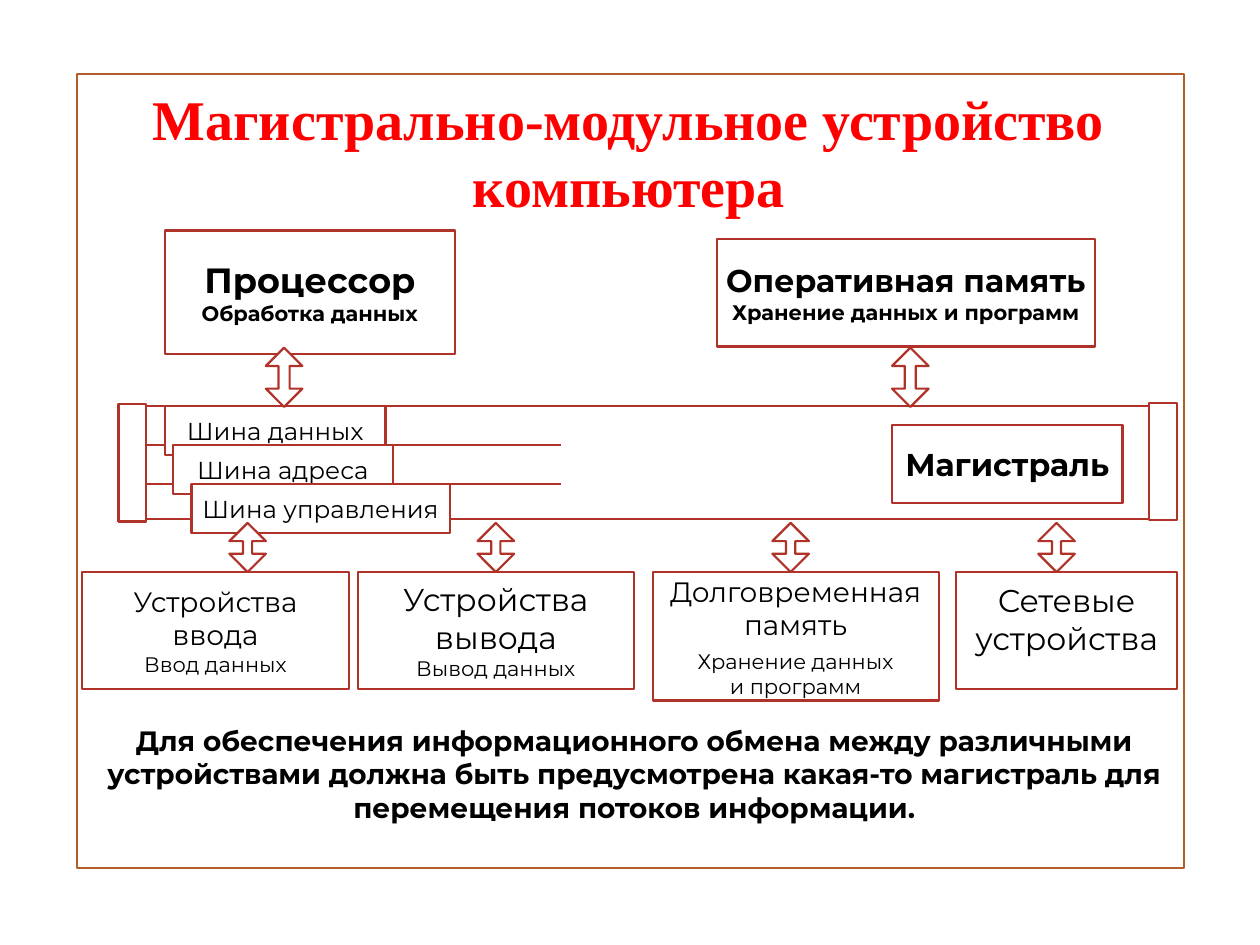
from lxml import etree
from pptx import Presentation
from pptx.dml.color import RGBColor
from pptx.enum import shapes, text
from pptx.oxml.ns import qn
from pptx.util import Inches, Pt

COLORS = {"frame": "B15E28", "line": "B13228", "fill": "FFFFFF",
          "title": "FF0000", "text": "000000"}
BODY_FONT = "Montserrat"
TITLE = "Магистрально-модульное устройство компьютера"
SUMMARY = ("Для обеспечения информационного обмена между различными устройствами "
           "должна быть предусмотрена какая-то магистраль для перемещения потоков информации.")

BUS_TOP, DEVICE_TOP = 3.22, 4.54
BUS_STEP = 0.31
BUS_PARTS = [(1.01, BUS_TOP, 8.18, 0.9), (0.94, 3.21, 0.22, 0.93), (9.12, 3.2, 0.22, 0.93)]
BUS_LABELS = [(1.31, 1.75, "Шина данных"), (1.37, 1.75, "Шина адреса"),
              (1.52, 2.05, "Шина управления")]
MODULES = [
    ((7.08, 3.37, 1.83, 0.62), [("Магистраль", 18)]),
    ((1.31, 1.83, 2.3, 0.98), [("Процессор", 20), ("Обработка данных", 12)]),
    ((5.69, 1.9, 3, 0.85), [("Оперативная память", 18), ("Хранение данных и программ", 12)]),
]
DEVICES = [
    (0.65, 2.12, 0.93, [("Устройства", 16), ("ввода", 16), ("Ввод данных", 12)]),
    (2.84, 2.19, 0.93, [("Устройства", 18), ("вывода", 18), ("Вывод данных", 12)]),
    (5.18, 2.27, 1.02, [("Долговременная", 16), ("память", 16),
                        ("Хранение данных", 12), ("и программ", 12)]),
    (7.59, 1.75, 0.93, [("Сетевые", 18), ("устройства", 18)]),
]
ARROW_ROWS = [(2.76, 0.47, 0.3, [2.11, 7.08]),
              (4.15, 0.39, 0.25, [1.82, 3.79, 6.13, 8.24])]


def color(name):
    return RGBColor.from_string(COLORS[name])


def style_font(font, size, bold, name=BODY_FONT, shade="text"):
    font.name, font.size, font.bold = name, Pt(size), bold
    font.color.rgb = color(shade)


def add_shape(slide, kind, box, line="line", filled=True):
    shape = slide.shapes.add_shape(kind, *map(Inches, box))
    shape.shadow.inherit = False
    if filled:
        shape.fill.solid()
        shape.fill.fore_color.rgb = color("fill")
    else:
        shape.fill.background()
    shape.line.color.rgb = color(line)
    shape.line.width = Pt(1.25)
    return shape


def add_box(slide, box, lines=(), bold=False):
    shape = add_shape(slide, shapes.MSO_SHAPE.RECTANGLE, box)
    frame = shape.text_frame
    frame.word_wrap = False
    frame.vertical_anchor = text.MSO_ANCHOR.MIDDLE
    for index, (line, size) in enumerate(lines):
        paragraph = frame.paragraphs[0] if index == 0 else frame.add_paragraph()
        paragraph.text = line
        paragraph.alignment = text.PP_ALIGN.CENTER
        style_font(paragraph.runs[0].font, size, bold)
    return shape


def add_bus_line(slide, y):
    line = slide.shapes.add_connector(shapes.MSO_CONNECTOR.STRAIGHT,
                                      Inches(1.16), Inches(y), Inches(4.45), Inches(y))
    line.line.color.rgb = color("line")
    line.line.width = Pt(1.25)
    etree.SubElement(line._element.spPr, qn("a:effectLst"))


def set_text(shape, content, size, name, shade):
    frame = shape.text_frame
    frame.text = content
    frame.word_wrap = True
    paragraph = frame.paragraphs[0]
    paragraph.alignment = text.PP_ALIGN.CENTER
    style_font(paragraph.runs[0].font, size, True, name, shade)
    return frame


def main():
    presentation = Presentation()
    presentation.slide_width, presentation.slide_height = Inches(10), Inches(7.5)
    slide = presentation.slides.add_slide(presentation.slide_layouts[5])

    add_shape(slide, shapes.MSO_SHAPE.RECTANGLE, (0.61, 0.59, 8.79, 6.3), "frame", False)
    for box in BUS_PARTS:
        add_box(slide, box)
    for step in (1, 2):
        add_bus_line(slide, BUS_TOP + step * BUS_STEP)
    for index, (left, width, label) in enumerate(BUS_LABELS):
        add_box(slide, (left, BUS_TOP + index * BUS_STEP, width, 0.39), [(label, 14)])
    for box, lines in MODULES:
        add_box(slide, box, lines, bold=True)

    devices = [add_box(slide, (left, DEVICE_TOP, width, height), lines)
               for left, width, height, lines in DEVICES]
    devices[2].text_frame.paragraphs[2].space_before = Pt(4)
    devices[3].text_frame.margin_bottom = Inches(0.24)

    for top, height, head, lefts in ARROW_ROWS:
        for left in lefts:
            arrow = add_shape(slide, shapes.MSO_SHAPE.UP_DOWN_ARROW, (left, top, 0.29, height))
            arrow.adjustments[0], arrow.adjustments[1] = 0.5, head

    title = slide.shapes.title
    title.left, title.top, title.width, title.height = map(Inches, (0.49, 0.58, 9, 1.25))
    frame = set_text(title, TITLE, 32, "Times New Roman", "title")
    frame.vertical_anchor = text.MSO_ANCHOR.MIDDLE
    frame.auto_size = text.MSO_AUTO_SIZE.NONE

    summary = slide.shapes.add_textbox(*map(Inches, (0.39, 5.69, 9.29, 0.91)))
    set_text(summary, SUMMARY, 16, BODY_FONT, "text")

    presentation.save("out.pptx")


if __name__ == "__main__":
    main()
